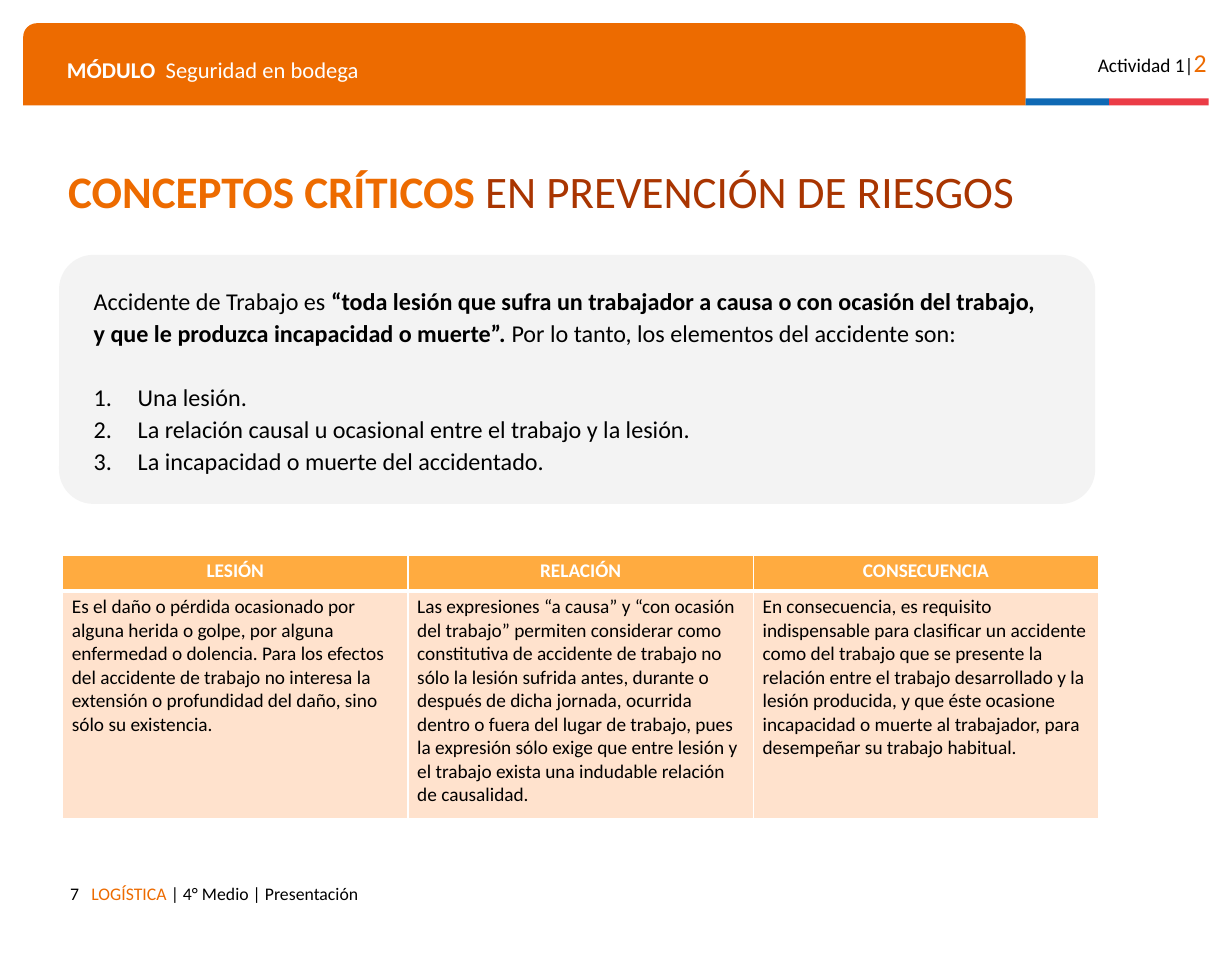
from lxml import etree
from pptx import Presentation
from pptx.dml.color import RGBColor
from pptx.enum import shapes, text
from pptx.oxml.ns import qn
from pptx.util import Inches, Pt

ORANGE = RGBColor(0xED, 0x6B, 0x00)
RUST = RGBColor(0xA9, 0x35, 0x01)
BLUE = RGBColor(0x0F, 0x69, 0xB4)
RED = RGBColor(0xEB, 0x3C, 0x46)
GRAY = RGBColor(0xF3, 0xF3, 0xF3)
AMBER = RGBColor(0xFF, 0xAB, 0x40)
PEACH = RGBColor(0xFF, 0xE2, 0xCD)
BLACK = RGBColor(0, 0, 0)
WHITE = RGBColor(0xFF, 0xFF, 0xFF)

FONT = "Calibri"
ELEMENTS = [
    "Una lesión.",
    "La relación causal u ocasional entre el trabajo y la lesión.",
    "La incapacidad o muerte del accidentado.",
]
CONCEPTS = {
    "LESIÓN": "Es el daño o pérdida ocasionado por alguna herida o golpe, por alguna "
    "enfermedad o dolencia. Para los efectos del accidente de trabajo no interesa la "
    "extensión o profundidad del daño, sino sólo su existencia.",
    "RELACIÓN": "Las expresiones “a causa” y “con ocasión del trabajo” permiten considerar "
    "como constitutiva de accidente de trabajo no sólo la lesión sufrida antes, durante o "
    "después de dicha jornada, ocurrida dentro o fuera del lugar de trabajo, pues la "
    "expresión sólo exige que entre lesión y el trabajo exista una indudable relación de "
    "causalidad.",
    "CONSECUENCIA": "En consecuencia, es requisito indispensable para clasificar un "
    "accidente como del trabajo que se presente la relación entre el trabajo desarrollado "
    "y la lesión producida, y que éste ocasione incapacidad o muerte al trabajador, para "
    "desempeñar su trabajo habitual.",
}


def add_block(slide, kind, box, color, adjustments=()):
    """Add a flat, borderless shape."""
    shape = slide.shapes.add_shape(kind, *map(Inches, box))
    shape.shadow.inherit = False
    shape.fill.solid()
    shape.fill.fore_color.rgb = color
    shape.line.fill.background()
    for index, value in enumerate(adjustments):
        shape.adjustments[index] = value


def add_frame(slide, box, anchor=text.MSO_ANCHOR.TOP):
    frame = slide.shapes.add_textbox(*map(Inches, box)).text_frame
    frame.word_wrap = True
    frame.vertical_anchor = anchor
    frame.margin_left = frame.margin_right = Inches(0.1)
    frame.margin_top = frame.margin_bottom = Inches(0.1)
    return frame


def write(paragraph, size, *runs, align=text.PP_ALIGN.LEFT, spacing=1.0):
    """Fill a paragraph with runs given as (words, color, bold)."""
    paragraph.alignment = align
    paragraph.line_spacing = spacing
    paragraph.font.name = FONT
    paragraph.font.size = Pt(size)
    for words, color, bold in runs:
        run = paragraph.add_run()
        run.text = words
        run.font.color.rgb = color
        run.font.bold = bold


def number(paragraph, indent):
    properties = paragraph._p.get_or_add_pPr()
    properties.set("marL", str(Inches(indent)))
    properties.set("indent", str(-Inches(indent)))
    etree.SubElement(properties, qn("a:buFont"), typeface=FONT)
    etree.SubElement(properties, qn("a:buAutoNum"), type="arabicPeriod")


def add_header(slide, left, top, width, height):
    band, stripe, blue = 8.65, 0.06, 0.72
    stripe_top = top + height - stripe
    add_block(slide, shapes.MSO_SHAPE.ROUND_2_SAME_RECTANGLE,
              (left, top, band, height), ORANGE, (0.167, 0))
    add_block(slide, shapes.MSO_SHAPE.RECTANGLE,
              (left + band, stripe_top, blue, stripe), BLUE)
    add_block(slide, shapes.MSO_SHAPE.RECTANGLE,
              (left + band + blue, stripe_top, width - band - blue, stripe), RED)
    module = add_frame(slide, (left + 0.28, top + 0.18, 8.14, 0.35))
    write(module.paragraphs[0], 14, ("MÓDULO", WHITE, True),
          ("  Seguridad en bodega", WHITE, False))
    activity = add_frame(slide, (left + width - 1.2, top + 0.1, 1.28, 0.38))
    paragraph = activity.paragraphs[0]
    write(paragraph, 12, ("Actividad 1|", BLACK, False), ("2", ORANGE, False),
          align=text.PP_ALIGN.RIGHT)
    paragraph.runs[1].font.size = Pt(16)


def add_title(slide, *box):
    frame = add_frame(slide, box, text.MSO_ANCHOR.MIDDLE)
    write(frame.paragraphs[0], 28, ("CONCEPTOS CRÍTICOS ", ORANGE, True),
          ("EN PREVENCIÓN DE RIESGOS", RUST, False), spacing=0.8)


def add_definition(slide, left, top, width, height):
    add_block(slide, shapes.MSO_SHAPE.ROUNDED_RECTANGLE,
              (left, top, width, height), GRAY, (0.138,))
    frame = add_frame(slide, (left + 0.2, top, 8.38, height), text.MSO_ANCHOR.MIDDLE)
    paragraph = frame.paragraphs[0]
    write(paragraph, 15, ("Accidente de Trabajo es ", BLACK, False),
          ("“toda lesión que sufra un trabajador a causa o con ocasión del trabajo, "
           "y que le produzca incapacidad o muerte”. ", BLACK, True),
          ("Por lo tanto, los elementos del accidente son:", BLACK, False), spacing=1.1)
    paragraph.space_after = Pt(20)
    for element in ELEMENTS:
        paragraph = frame.add_paragraph()
        write(paragraph, 15, (element, BLACK, False), spacing=1.1)
        number(paragraph, 0.38)


def set_borders(cell, **widths):
    """Draw white cell borders, in points, for the sides L, R, T and B."""
    properties = cell._tc.get_or_add_tcPr()
    for index, side in enumerate("LRTB"):
        line = etree.Element(qn(f"a:ln{side}"), w=str(Pt(widths.get(side, 1))))
        fill = etree.SubElement(line, qn("a:solidFill"))
        etree.SubElement(fill, qn("a:srgbClr"), val=str(WHITE))
        properties.insert(index, line)


def fill_cell(cell, words, fill, color, bold, align):
    cell.fill.solid()
    cell.fill.fore_color.rgb = fill
    cell.margin_left = cell.margin_right = Inches(0.08)
    cell.margin_top = cell.margin_bottom = Inches(0.04)
    write(cell.text_frame.paragraphs[0], 12, (words, color, bold), align=align)


def add_concepts(slide, left, top, width, height):
    heading = 0.31
    box = map(Inches, (left, top, width, height))
    table = slide.shapes.add_table(2, len(CONCEPTS), *box).table
    table.rows[0].height = Inches(heading)
    table.rows[1].height = Inches(height - heading)
    for column, (concept, meaning) in enumerate(CONCEPTS.items()):
        head, body = table.cell(0, column), table.cell(1, column)
        fill_cell(head, concept, AMBER, WHITE, True, text.PP_ALIGN.CENTER)
        fill_cell(body, meaning, PEACH, BLACK, False, text.PP_ALIGN.LEFT)
        set_borders(head, B=3)
        set_borders(body, T=3)


def add_footer(slide, left, top, width, height):
    page = 0.58
    frame = add_frame(slide, (left, top, page, height))
    write(frame.paragraphs[0], 11, ("7", BLACK, False), align=text.PP_ALIGN.RIGHT)
    frame = add_frame(slide, (left + page - 0.09, top, width - page + 0.09, height))
    write(frame.paragraphs[0], 11, ("LOGÍSTICA ", ORANGE, False),
          ("| 4° Medio | Presentación", BLACK, False))


def main():
    presentation = Presentation()
    presentation.slide_width = Inches(10.63)
    presentation.slide_height = Inches(8.27)
    slide = presentation.slides.add_slide(presentation.slide_layouts[6])
    add_header(slide, 0.2, 0.2, 10.23, 0.71)
    add_footer(slide, 0.2, 7.53, 7.63, 0.38)
    add_title(slide, 0.49, 1.51, 9.79, 0.35)
    add_definition(slide, 0.51, 2.2, 8.94, 2.15)
    add_concepts(slide, 0.54, 4.79, 8.94, 2.28)
    presentation.save("out.pptx")


if __name__ == "__main__":
    main()
